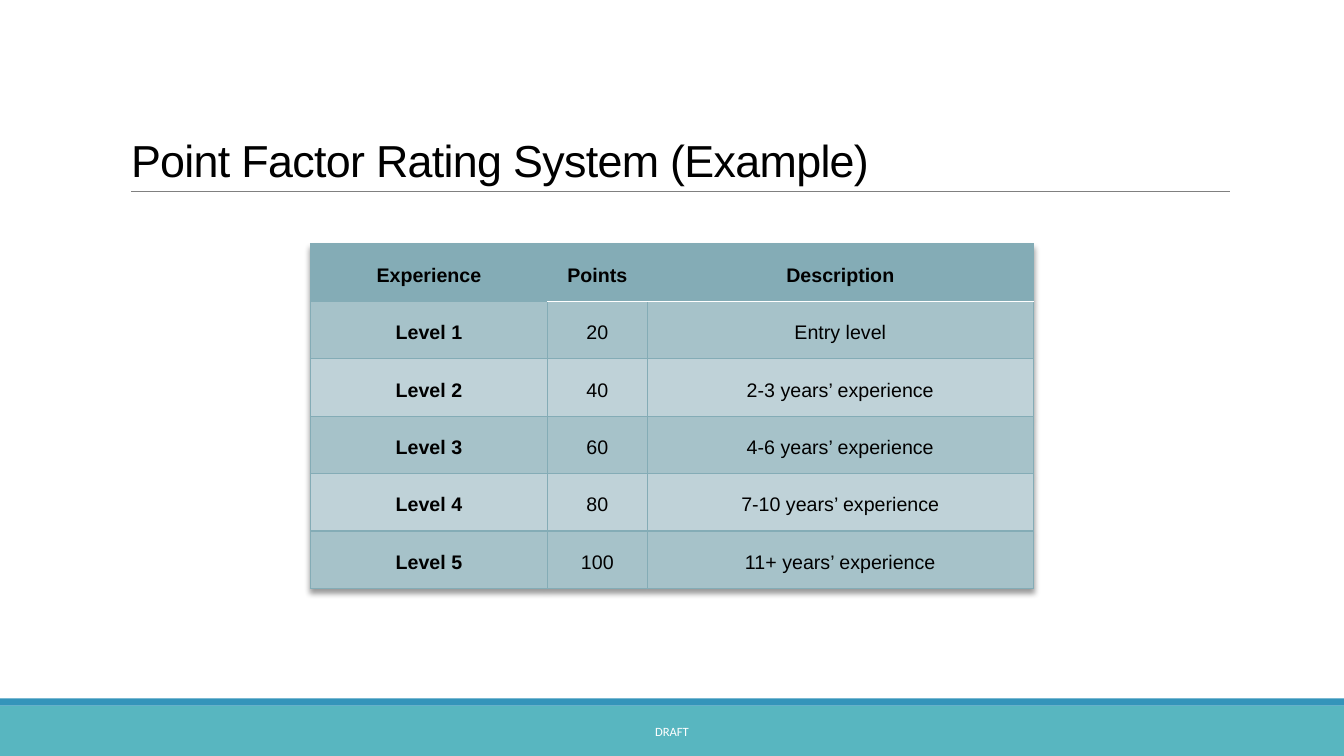
"""Builds the point factor rating slide: title, experience table and draft footer."""
from lxml.etree import SubElement
from pptx import Presentation
from pptx.dml.color import RGBColor
from pptx.enum.shapes import MSO_CONNECTOR as Connector, MSO_SHAPE as Shape
from pptx.enum.text import MSO_ANCHOR as Anchor, MSO_AUTO_SIZE as AutoSize, PP_ALIGN as Align
from pptx.oxml import parse_xml
from pptx.oxml.ns import nsdecls, qn
from pptx.util import Inches, Pt

TITLE = "Point Factor Rating System (Example)"
FOOTER = "DRAFT"
RATINGS = [
    ("Experience", "Points", "Description"),
    ("Level 1", "20", "Entry level"),
    ("Level 2", "40", "2-3 years’ experience"),
    ("Level 3", "60", "4-6 years’ experience"),
    ("Level 4", "80", "7-10 years’ experience"),
    ("Level 5", "100", "11+ years’ experience"),
]
COLORS = {
    "text": "000000", "white": "FFFFFF", "rule": "808080", "footer": "58B6C0",
    "stripe": "3494BA", "header": "84ACB6", "odd": "A6C2C9", "even": "BFD2D8",
}
WIDTH, HEIGHT = 13.33, 7.5
COLUMNS = (2.35, 0.99, 3.83)
ROW = 0.57
TABLE_TOP = 2.42
FOOTER_TOP, STRIPE = 7.0, 0.07


def color(name):
    return RGBColor.from_string(COLORS[name])


def write(paragraph, text, size, font, tone, bold=False):
    run = paragraph.add_run()
    run.text = text
    run.font.size, run.font.name, run.font.bold = Pt(size), font, bold
    run.font.color.rgb = color(tone)
    return run


def add_band(slide, top, height, tone):
    band = slide.shapes.add_shape(Shape.RECTANGLE, 0, Inches(top), Inches(WIDTH), Inches(height))
    band.shadow.inherit = False
    band.fill.solid()
    band.fill.fore_color.rgb = color(tone)
    band.line.fill.background()


def add_title(slide):
    title = slide.shapes.title
    title.left, title.top, title.width, title.height = map(Inches, (1.2, 0.31, 11, 1.59))
    frame = title.text_frame
    frame.auto_size, frame.word_wrap = AutoSize.NONE, True
    frame.vertical_anchor = Anchor.BOTTOM
    paragraph = frame.paragraphs[0]
    paragraph.alignment, paragraph.line_spacing = Align.LEFT, 0.85
    run = write(paragraph, TITLE, 32, "Arial", "text")
    run.font._element.set("spc", "-50")
    rule = slide.shapes.add_connector(
        Connector.STRAIGHT, Inches(1.3), Inches(1.9), Inches(12.2), Inches(1.9))
    rule.line.color.rgb, rule.line.width = color("rule"), Pt(0.5)
    SubElement(rule._element.spPr, qn("a:effectLst"))


def add_borders(cell, row, column):
    for side in "LRTB":
        under_header = column > 0 and (row, side) in ((0, "B"), (1, "T"))
        tone, width = ("white", 1.25) if under_header else ("header", 1)
        cell._tc.get_or_add_tcPr().append(parse_xml(
            f'<a:ln{side} {nsdecls("a")} w="{Pt(width)}"><a:solidFill>'
            f'<a:srgbClr val="{COLORS[tone]}"/></a:solidFill></a:ln{side}>'))


def add_ratings(slide):
    width = sum(COLUMNS)
    frame = slide.shapes.add_table(
        len(RATINGS), len(COLUMNS), Inches((WIDTH - width) / 2), Inches(TABLE_TOP),
        Inches(width), Inches(ROW * len(RATINGS)))
    table = frame.table
    table._tbl.tblPr.insert(0, parse_xml(
        f'<a:effectLst {nsdecls("a")}><a:outerShdw blurRad="50800" dist="38100" dir="5400000">'
        '<a:srgbClr val="000000"><a:alpha val="40000"/></a:srgbClr></a:outerShdw></a:effectLst>'))
    for column, share in zip(table.columns, COLUMNS):
        column.width = Inches(share)
    for r, rating in enumerate(RATINGS):
        table.rows[r].height = Inches(ROW)
        for c, text in enumerate(rating):
            cell = table.cell(r, c)
            cell.margin_left = cell.margin_right = Inches(0.07)
            cell.margin_top = cell.margin_bottom = 0
            cell.vertical_anchor = Anchor.MIDDLE
            add_borders(cell, r, c)
            cell.fill.solid()
            cell.fill.fore_color.rgb = color("header" if r == 0 else "odd" if r % 2 else "even")
            paragraph = cell.text_frame.paragraphs[0]
            paragraph.alignment, paragraph.line_spacing = Align.CENTER, 1.25
            write(paragraph, text, 14, "Arial", "text", bold=r == 0 or c == 0)


def add_footer(slide):
    width = 5.27
    box = slide.shapes.add_textbox(
        Inches((WIDTH - width) / 2), Inches(7.06), Inches(width), Inches(0.4))
    frame = box.text_frame
    frame.word_wrap, frame.vertical_anchor = True, Anchor.MIDDLE
    frame.paragraphs[0].alignment = Align.CENTER
    write(frame.paragraphs[0], FOOTER, 9, "Calibri", "white")


def main():
    deck = Presentation()
    deck.slide_width, deck.slide_height = Inches(WIDTH), Inches(HEIGHT)
    slide = deck.slides.add_slide(deck.slide_layouts[5])
    add_band(slide, FOOTER_TOP, HEIGHT - FOOTER_TOP, "footer")
    add_band(slide, FOOTER_TOP - STRIPE, STRIPE, "stripe")
    add_title(slide)
    add_ratings(slide)
    add_footer(slide)
    deck.save("out.pptx")


if __name__ == "__main__":
    main()
